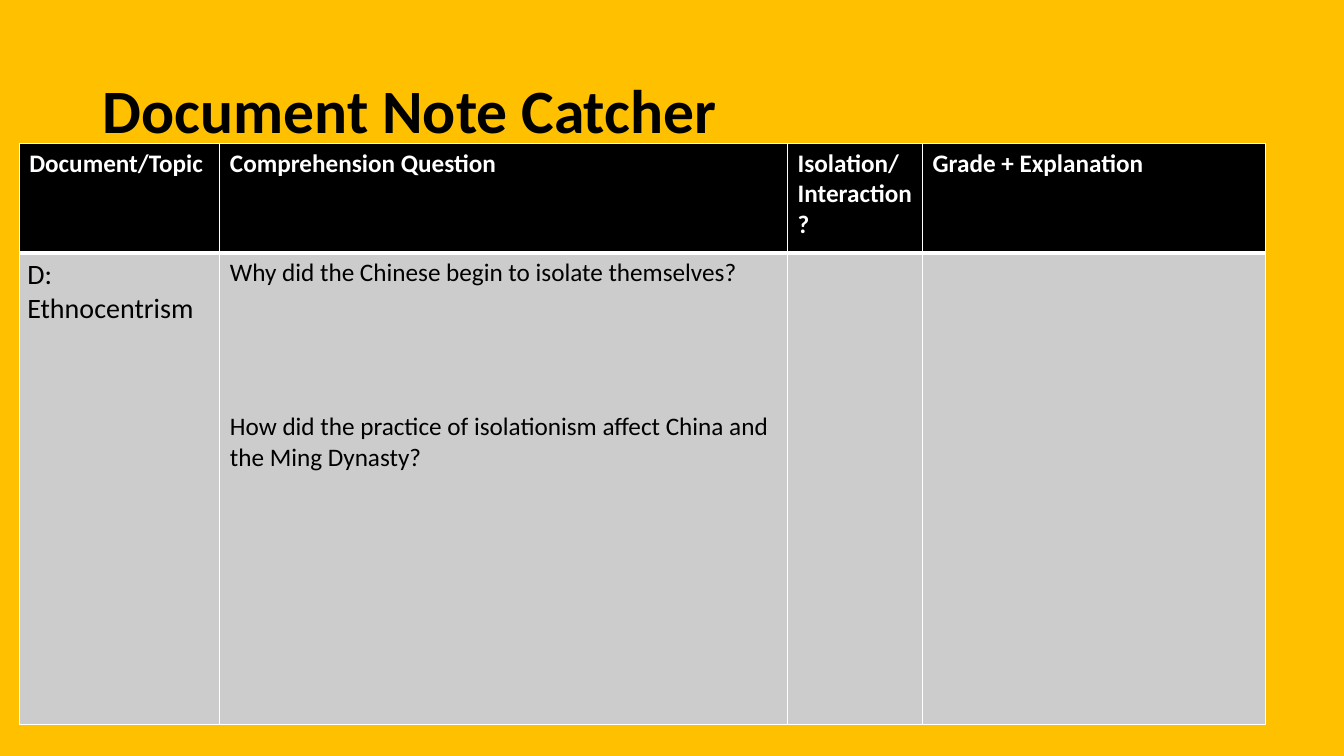
from pptx import Presentation, util as u
from pptx.dml.color import RGBColor
from pptx.enum import text
from pptx.oxml import parse_xml
from pptx.oxml.ns import nsdecls

COLORS = {"page": "FFC000", "ink": "000000", "paper": "FFFFFF", "body": "CCCCCC"}
HEADERS = ["Document/Topic", "Comprehension Question", "Isolation/ Interaction?", "Grade + Explanation"]
TOPIC = ["D: Ethnocentrism"]
QUESTIONS = [
    "Why did the Chinese begin to isolate themselves?",
    "How did the practice of isolationism affect China and the Ming Dynasty?",
]


def rgb(name):
    return RGBColor.from_string(COLORS[name])


def write(tf, lines, size=18, color="ink", bold=False, gap=0, spacing=None):
    for i, line in enumerate(lines):
        p = tf.paragraphs[0] if i == 0 else tf.add_paragraph()
        p.alignment = text.PP_ALIGN.LEFT
        p.line_spacing = spacing
        p.space_before = u.Pt(gap if i else 0)
        r = p.add_run()
        r.text = line
        r.font.name = "Calibri"
        r.font.size = u.Pt(size)
        r.font.bold = bold
        r.font.color.rgb = rgb(color)


class NoteSlide:
    def __init__(self, prs):
        self.prs = prs
        self.s = prs.slides.add_slide(prs.slide_layouts[5])
        fill = self.s.background.fill
        fill.solid()
        fill.fore_color.rgb = rgb("page")

    def x(self, percent):
        return round(self.prs.slide_width * percent / 100)

    def y(self, percent):
        return round(self.prs.slide_height * percent / 100)

    def title(self, line, left, top, width, height):
        sp = self.s.shapes.title
        sp.left, sp.top = self.x(left), self.y(top)
        sp.width, sp.height = self.x(width), self.y(height)
        sp.text_frame.vertical_anchor = text.MSO_ANCHOR.MIDDLE
        write(sp.text_frame, [line], size=44, bold=True, spacing=0.9)

    def table(self, left, top, widths, heights):
        table = self.s.shapes.add_table(
            len(heights), len(widths), self.x(left), self.y(top),
            self.x(sum(widths)), self.y(sum(heights))).table
        for column, width in zip(table.columns, widths):
            column.width = self.x(width)
        for row, height in zip(table.rows, heights):
            row.height = self.y(height)
        return table

    def cell(self, cell, lines, fill, edges, **fmt):
        tc_pr = cell._tc.get_or_add_tcPr()
        for side, width in zip("LRTB", edges):
            tc_pr.append(parse_xml(
                f'<a:ln{side} {nsdecls("a")} w="{u.Pt(width)}"><a:solidFill>'
                f'<a:srgbClr val="{COLORS["paper"]}"/></a:solidFill></a:ln{side}>'))
        cell.fill.solid()
        cell.fill.fore_color.rgb = rgb(fill)
        write(cell.text_frame, lines, **fmt)


def main():
    prs = Presentation()
    prs.slide_width, prs.slide_height = u.Inches(13.33), u.Inches(7.5)
    note = NoteSlide(prs)
    note.title("Document Note Catcher", 6.9, 5.33, 86.27, 19.33)
    table = note.table(1.43, 18.93, [14.93, 42.24, 10.05, 25.51], [14.53, 62.4])
    for i, header in enumerate(HEADERS):
        note.cell(table.cell(0, i), [header], "ink", (1, 1, 1, 3), color="paper", bold=True)
    for i, lines in enumerate([TOPIC, QUESTIONS, [], []]):
        note.cell(table.cell(1, i), lines, "body", (1, 1, 3, 1), size=18 if i else 20, gap=88)
    topic = table.cell(1, 0)
    topic.margin_left = topic.margin_right = u.Inches(0.08)
    prs.save("out.pptx")


if __name__ == "__main__":
    main()
